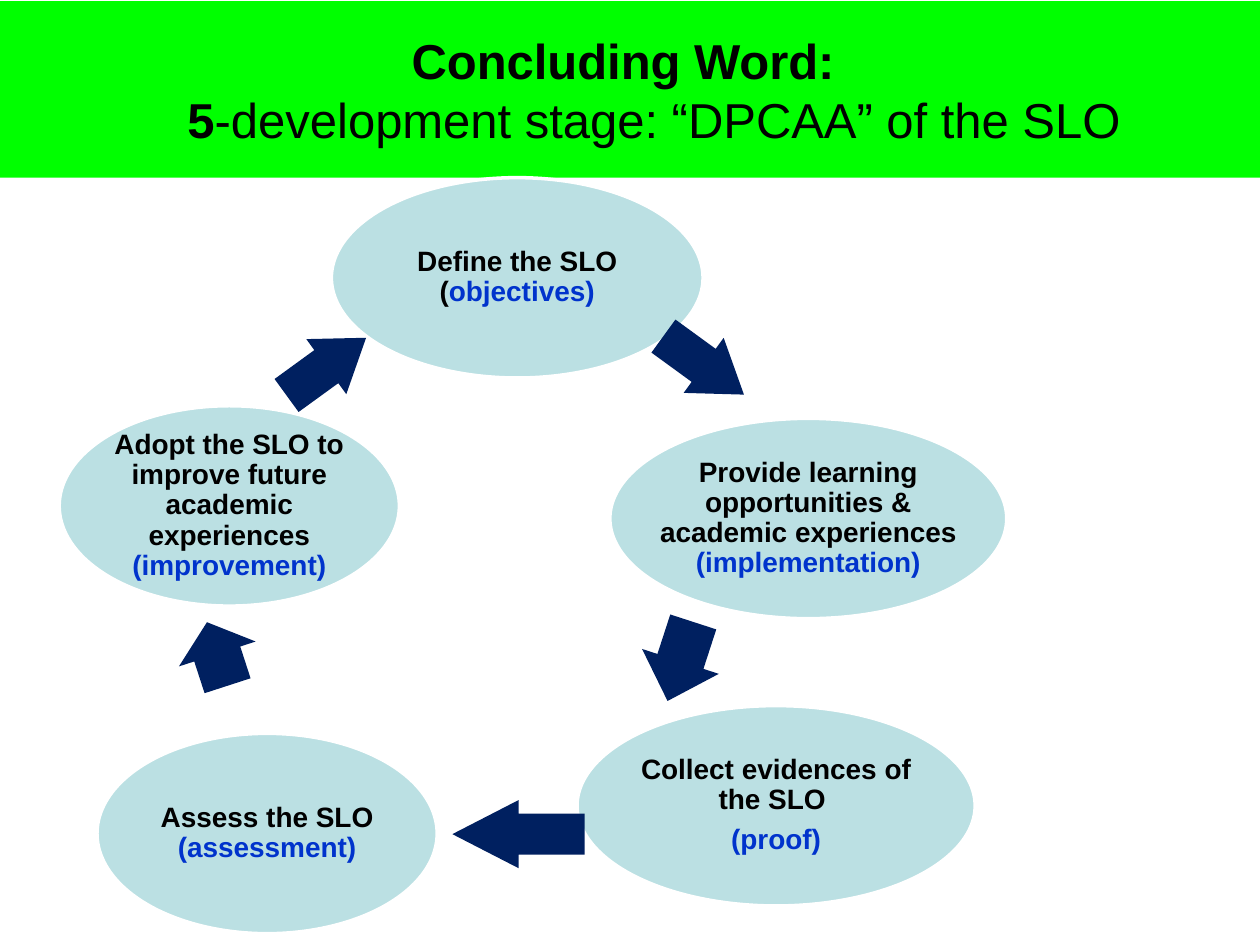
from dataclasses import dataclass

from pptx import Presentation
from pptx import util as u
from pptx.dml.color import RGBColor
from pptx.enum import shapes, text


@dataclass(frozen=True)
class Theme:
    font: str = "Arial"
    banner: str = "00FF00"
    stage: str = "BBE0E3"
    outline: str = "FFFFFF"
    arrow: str = "002060"
    ink: str = "000000"
    accent: str = "0033CC"
    title_size: int = 28
    stage_size: int = 16


OVAL_TEXT_INSET = 0.1464
STAGE_HEIGHT = 1.59


class SlideBuilder:
    def __init__(self, slide, theme):
        self.slide = slide
        self.theme = theme

    def shape(self, kind, box, fill):
        shape = self.slide.shapes.add_shape(kind, *map(u.Inches, box))
        shape.shadow.inherit = False
        shape.fill.solid()
        shape.fill.fore_color.rgb = RGBColor.from_string(fill)
        shape.line.fill.background()
        return shape

    def frame(self, shape, **margins):
        formats = {"word_wrap": True, "vertical_anchor": text.MSO_ANCHOR.MIDDLE}
        formats.update({side: u.Inches(value) for side, value in margins.items()})
        for name, value in formats.items():
            setattr(shape.text_frame, name, value)
        return shape.text_frame

    def run(self, paragraph, words, size, color, bold=True):
        run = paragraph.add_run()
        run.text = words
        formats = {"name": self.theme.font, "size": u.Pt(size), "bold": bold}
        for name, value in formats.items():
            setattr(run.font, name, value)
        run.font.color.rgb = RGBColor.from_string(color)

    def title(self, box, heading, number, rest):
        theme = self.theme
        shape = self.shape(shapes.MSO_SHAPE.RECTANGLE, box, theme.banner)
        paragraph = self.frame(shape).paragraphs[0]
        paragraph.alignment = text.PP_ALIGN.CENTER
        properties = paragraph._p.get_or_add_pPr()
        properties.set("marL", str(u.Inches(0.38)))
        properties.set("indent", str(u.Inches(-0.38)))
        self.run(paragraph, heading, theme.title_size, theme.ink)
        paragraph.add_line_break()
        self.run(paragraph, number, theme.title_size, theme.ink)
        self.run(paragraph, rest, theme.title_size, theme.ink, bold=False)

    def stage(self, left, top, width, inset, paragraphs):
        theme = self.theme
        box = (left, top, width, STAGE_HEIGHT)
        shape = self.shape(shapes.MSO_SHAPE.OVAL, box, theme.stage)
        shape.line.color.rgb = RGBColor.from_string(theme.outline)
        shape.line.width = u.Pt(2)
        side = inset - OVAL_TEXT_INSET * width
        frame = self.frame(shape, margin_left=side, margin_right=side,
                           margin_top=0.02, margin_bottom=0.02)
        formats = {"alignment": text.PP_ALIGN.CENTER, "line_spacing": 0.9,
                   "space_after": u.Pt(0.35 * theme.stage_size)}
        for index, runs in enumerate(paragraphs):
            paragraph = frame.add_paragraph() if index else frame.paragraphs[0]
            for name, value in formats.items():
                setattr(paragraph, name, value)
            for words, color in runs:
                self.run(paragraph, words, theme.stage_size, color)

    def arrow(self, left, top, width, height, rotation):
        shape = self.shape(shapes.MSO_SHAPE.RIGHT_ARROW,
                           (left, top, width, height), self.theme.arrow)
        shape.adjustments[0] = 0.6
        shape.adjustments[1] = width / 2 / min(width, height)
        shape.rotation = rotation


def main():
    theme = Theme()
    presentation = Presentation()
    presentation.slide_width = u.Inches(10)
    presentation.slide_height = u.Inches(7.5)
    slide = presentation.slides.add_slide(presentation.slide_layouts[6])
    builder = SlideBuilder(slide, theme)

    builder.title((0, 0.01, 10, 1.4), "Concluding Word: ", "5",
                  "-development stage: “DPCAA” of the SLO")

    ink, accent = theme.ink, theme.accent
    cycle = [
        ((2.63, 1.41, 2.95, 0.34),
         [[("Define the SLO (", ink), ("objectives)", accent)]],
         (5.19, 2.63, 0.79, 0.54, 36)),
        ((4.84, 3.32, 3.15, 0.36),
         [[("Provide learning opportunities & academic experiences ", ink),
           ("(implementation)", accent)]],
         (5.07, 4.93, 0.66, 0.64, 108)),
        ((4.58, 5.6, 3.16, 0.36),
         [[("Collect evidences of the SLO ", ink)], [("(proof)", accent)]],
         (3.59, 6.35, 1.05, 0.54, 180)),
        ((0.77, 5.82, 2.7, 0.28),
         [[("Assess the SLO ", ink), ("(assessment)", accent)]],
         (1.46, 4.87, 0.53, 0.64, 252)),
        ((0.47, 3.22, 2.7, 0.37),
         [[("Adopt the SLO to improve future academic experiences ", ink),
           ("(improvement)", accent)]],
         (2.2, 2.64, 0.78, 0.54, 324)),
    ]
    for oval, paragraphs, arrow in cycle:
        builder.stage(*oval, paragraphs)
        builder.arrow(*arrow)

    presentation.save("out.pptx")


if __name__ == "__main__":
    main()
